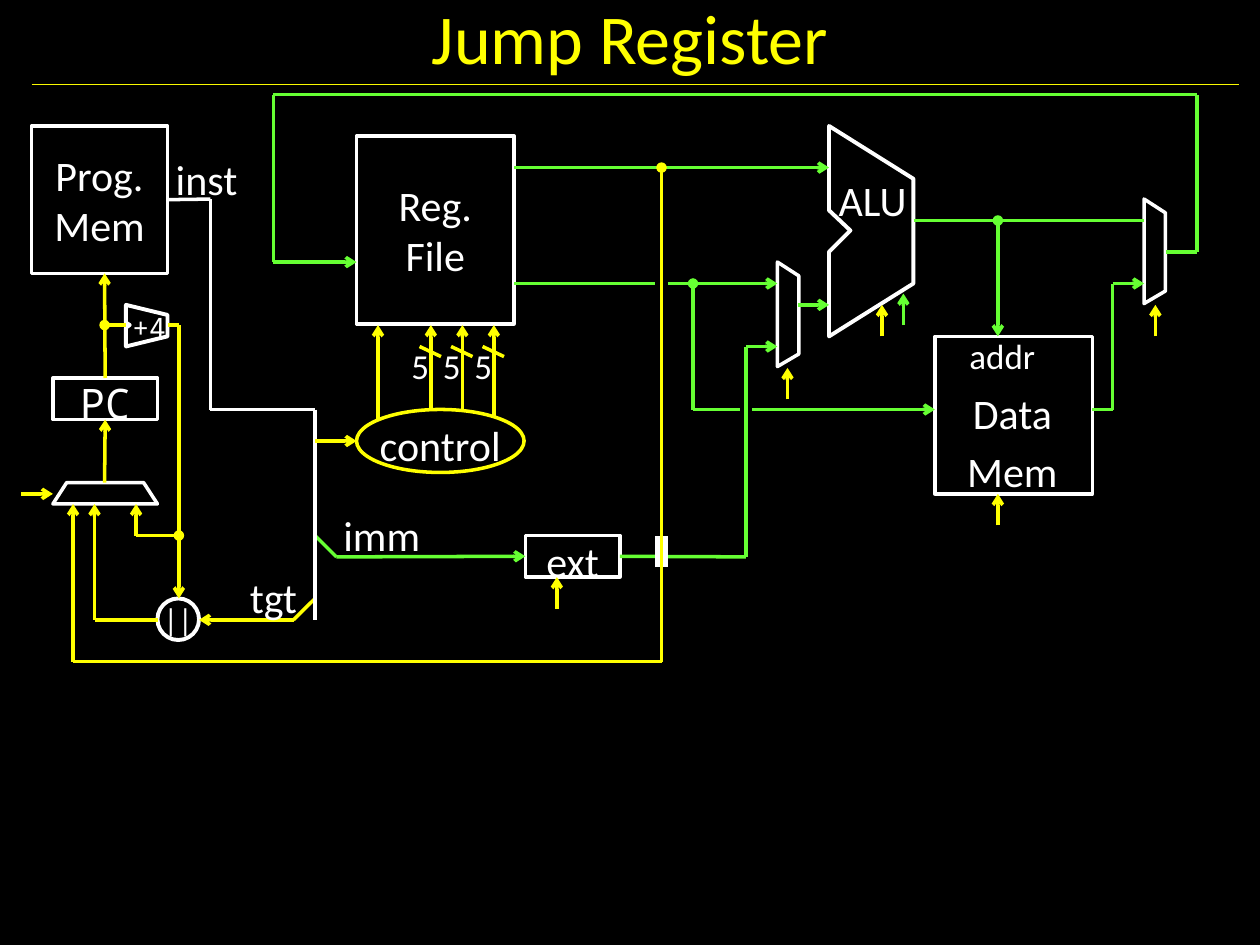
from dataclasses import dataclass

from lxml.etree import SubElement
from pptx import Presentation
from pptx.dml.color import RGBColor
from pptx.enum.shapes import MSO_CONNECTOR, MSO_SHAPE
from pptx.enum.text import MSO_ANCHOR, PP_ALIGN
from pptx.oxml.ns import qn
from pptx.util import Inches, Pt


@dataclass(frozen=True)
class Theme:
    background: str = "000000"
    ink: str = "FFFFFF"
    control: str = "FFFF00"
    data: str = "66FF33"
    rule: str = "F9F900"
    font: str = "Calibri"
    mono: str = "Noto Sans Mono"
    title: int = 40
    label: int = 24
    small: int = 20
    symbol: int = 18
    tiny: int = 16
    wire: float = 2
    heavy: float = 2.25
    gap: float = 7
    hairline: float = 0.75
    spacing: float = 1.16


class Diagram:
    def __init__(self, slide, theme):
        self.slide = slide
        self.theme = theme
        slide.background.fill.solid()
        slide.background.fill.fore_color.rgb = RGBColor.from_string(theme.background)

    def _outline(self, shape, color, width, fill=None):
        shape.shadow.inherit = False
        if fill:
            shape.fill.solid()
            shape.fill.fore_color.rgb = RGBColor.from_string(fill)
        else:
            shape.fill.background()
        shape.line.color.rgb = RGBColor.from_string(color)
        shape.line.width = Pt(width)

    def _write(self, shape, text, size=None, color=None, font=None,
               wrap=True, spacing=None, insets=None):
        frame = shape.text_frame
        frame.text = text
        frame.word_wrap = wrap
        frame.vertical_anchor = MSO_ANCHOR.MIDDLE
        if insets:
            frame.margin_left = frame.margin_right = Inches(insets[0])
            frame.margin_top = frame.margin_bottom = Inches(insets[1])
        for paragraph in frame.paragraphs:
            paragraph.alignment = PP_ALIGN.CENTER
            if spacing:
                paragraph.line_spacing = spacing
            for run in paragraph.runs:
                run.font.size = Pt(size or self.theme.label)
                run.font.name = font or self.theme.font
                run.font.color.rgb = RGBColor.from_string(color or self.theme.ink)

    def label(self, text, place, **style):
        box = self.slide.shapes.add_textbox(*map(Inches, place))
        self._write(box, text, **style)

    def tag(self, text, place, **style):
        """Write a one-word label that fills its box without insets."""
        self.label(text, place, spacing=self.theme.spacing, insets=(0, 0), **style)

    def block(self, place, text="", kind=MSO_SHAPE.RECTANGLE, color=None,
              width=None, fill=None, **style):
        shape = self.slide.shapes.add_shape(kind, *map(Inches, place))
        self._outline(shape, color or self.theme.ink, width or self.theme.wire, fill)
        if text:
            self._write(shape, text, **style)
        return shape

    def polygon(self, points, width=None):
        start, *others = [(Inches(x), Inches(y)) for x, y in points]
        builder = self.slide.shapes.build_freeform(*start)
        builder.add_line_segments(others, close=True)
        self._outline(builder.convert_to_shape(), self.theme.ink, width or self.theme.wire)

    def wire(self, color, *points, width=None, start=None, end=None,
             source=None, target=None):
        """Draw straight segments through points; start and end name line-end marks,
        source and target are (shape, site) pairs to join."""
        segments = []
        for (x1, y1), (x2, y2) in zip(points, points[1:]):
            segment = self.slide.shapes.add_connector(
                MSO_CONNECTOR.STRAIGHT, Inches(x1), Inches(y1), Inches(x2), Inches(y2))
            segment.line.color.rgb = RGBColor.from_string(color)
            segment.line.width = Pt(width or self.theme.wire)
            SubElement(segment._element.spPr, qn("a:effectLst"))
            segments.append(segment)
        if source:
            segments[0].begin_connect(*source)
        if target:
            segments[-1].end_connect(*target)
        for segment, tag, mark in ((segments[0], "a:headEnd", start),
                                   (segments[-1], "a:tailEnd", end)):
            if mark:
                SubElement(segment.line._get_or_add_ln(), qn(tag), type=mark)


def draw_units(d):
    """Draw memories, registers, multiplexers and the ALU; return those wires join."""
    t = d.theme
    program = d.block((0.25, 1, 1.08, 1.17), "Prog.\nMem")
    d.block((2.83, 1.08, 1.25, 1.49), "Reg.\vFile")
    d.block((7.42, 2.67, 1.25, 1.25))
    pc = d.block((0.42, 3, 0.83, 0.33), "PC", font=t.mono, spacing=t.spacing)
    ext = d.block((4.17, 4.25, 0.75, 0.33), "ext", spacing=t.spacing, insets=(0, 0.05))
    d.block((1.25, 4.75, 0.33, 0.33), "||", MSO_SHAPE.OVAL, width=t.heavy,
            size=t.symbol, wrap=False, insets=(0, 0))
    d.polygon([(6.58, 1), (7.25, 1.42), (7.25, 2.25), (6.58, 2.67),
               (6.58, 2), (6.75, 1.83), (6.58, 1.67)], t.heavy)
    d.polygon([(1, 2.42), (1.33, 2.5), (1.33, 2.67), (1, 2.75),
               (1, 2.6), (1.03, 2.58), (1, 2.56)], t.heavy)
    for x, y in ((9.08, 1.58), (6.17, 2.08)):
        d.polygon([(x, y), (x + 0.17, y + 0.11), (x + 0.17, y + 0.73), (x, y + 0.83)])
    d.polygon([(0.42, 4), (0.53, 3.83), (1.14, 3.83), (1.25, 4)])
    return program, pc, ext


def draw_wires(d, program, pc, ext):
    t = d.theme
    # Data path
    d.wire(t.data, (4.08, 1.33), (6.58, 1.33), end="arrow")
    d.wire(t.data, (4.08, 2.25), (6.17, 2.25), end="arrow")
    d.wire(t.data, (6.33, 2.42), (6.58, 2.42), end="arrow")
    d.wire(t.data, (7.25, 1.75), (9.08, 1.75))
    d.wire(t.data, (7.92, 1.75), (7.92, 2.67), start="oval", end="arrow")
    d.wire(t.data, (5.5, 2.25), (5.5, 3.25), (7.42, 3.25), start="oval", end="arrow")
    d.wire(t.data, (8.67, 3.25), (8.83, 3.25), (8.83, 2.25), (9.08, 2.25), end="arrow")
    d.wire(t.data, (9.25, 2), (9.5, 2), (9.5, 0.75), (2.17, 0.75), (2.17, 2.08),
           (2.83, 2.08), end="arrow")
    d.wire(t.data, (2.5, 4.25), (2.67, 4.42), (4.17, 4.42), end="arrow", target=(ext, 1))
    d.wire(t.data, (4.92, 4.42), (5.92, 4.42), source=(ext, 3))

    # Instruction and next program counter
    d.wire(t.control, (2.5, 4.75), (2.33, 4.92), (1.58, 4.92), end="arrow")
    d.wire(t.ink, (1.33, 1.58), (1.67, 1.58), (1.67, 3.25), (2.5, 3.25), (2.5, 4.92),
           source=(program, 3))
    d.wire(t.control, (0.83, 3), (0.83, 2.17), end="arrow", source=(pc, 0))
    d.wire(t.control, (0.83, 3.83), (0.83, 3.33), end="arrow", target=(pc, 2))
    d.wire(t.control, (0.83, 2.58), (1, 2.58), start="oval")
    d.wire(t.control, (1.33, 2.58), (1.42, 2.58), (1.42, 4.75), end="arrow")
    d.wire(t.control, (1.42, 4.25), (1.08, 4.25), (1.08, 4), start="oval", end="arrow")
    d.wire(t.control, (1.25, 4.92), (0.75, 4.92), (0.75, 4), end="arrow")

    # Gaps where one wire passes over another
    for color, x, y in ((t.ink, 5.25, 4.5), (t.background, 5.25, 2.33),
                        (t.background, 5.92, 3.33)):
        d.wire(color, (x, y), (x, y - 0.25), width=t.gap)
    d.wire(t.data, (5.92, 4.42), (5.92, 2.75), (6.17, 2.75), end="arrow")
    d.wire(t.control, (5.25, 1.33), (5.25, 5.25), (0.58, 5.25), (0.58, 4),
           start="oval", end="arrow")


def draw_control(d):
    t = d.theme
    d.wire(t.control, (3, 3.42), (3, 2.58), end="arrow")
    for x in (3.42, 3.67, 3.92):
        d.wire(t.control, (x, 3.42), (x, 2.58), end="arrow")
        d.wire(t.control, (x - 0.09, 2.75), (x + 0.08, 2.83))
        d.tag("5", (x - 0.17, 2.75, 0.17, 0.25), size=t.small)
    d.block((2.83, 3.25, 1.33, 0.5), "control", MSO_SHAPE.OVAL, color=t.control,
            fill=t.background, wrap=False, spacing=t.spacing)
    d.wire(t.control, (2.5, 3.5), (2.83, 3.5), end="arrow")
    d.wire(t.control, (0.17, 3.92), (0.42, 3.92), end="arrow")
    for x, y in ((7.92, 3.92), (9.17, 2.42), (7, 2.42), (6.25, 2.92), (4.42, 4.58)):
        d.wire(t.control, (x, y + 0.25), (x, y), end="arrow")
    d.wire(t.data, (7.17, 2.58), (7.17, 2.33), end="arrow")


def draw_labels(d):
    t = d.theme
    d.label("Data Mem", (7.5, 3.25, 1.07, 0.45), spacing=t.spacing)
    d.label("addr", (7.42, 2.58, 1.07, 0.43), size=t.small, spacing=t.spacing)
    d.tag("+4", (1.02, 2.45, 0.33, 0.25), size=t.tiny, font=t.mono)
    for text, place in (("ALU", (6.62, 1.34, 0.61, 0.43)),
                        ("inst", (1.36, 1.26, 0.56, 0.25)),
                        ("imm", (2.68, 4.09, 0.7, 0.25)),
                        ("tgt", (1.92, 4.58, 0.5, 0.25))):
        d.tag(text, place)


def main():
    deck = Presentation()
    deck.slide_width, deck.slide_height = Inches(10), Inches(7.5)
    theme = Theme()
    diagram = Diagram(deck.slides.add_slide(deck.slide_layouts[6]), theme)
    diagram.wire(theme.rule, (0.25, 0.67), (9.83, 0.67), width=theme.hairline)
    diagram.label("Jump Register", (0.25, 0, 9.5, 0.58), size=theme.title,
                  color=theme.control)
    program, pc, ext = draw_units(diagram)
    draw_wires(diagram, program, pc, ext)
    draw_control(diagram)
    draw_labels(diagram)
    deck.save("out.pptx")


if __name__ == "__main__":
    main()
